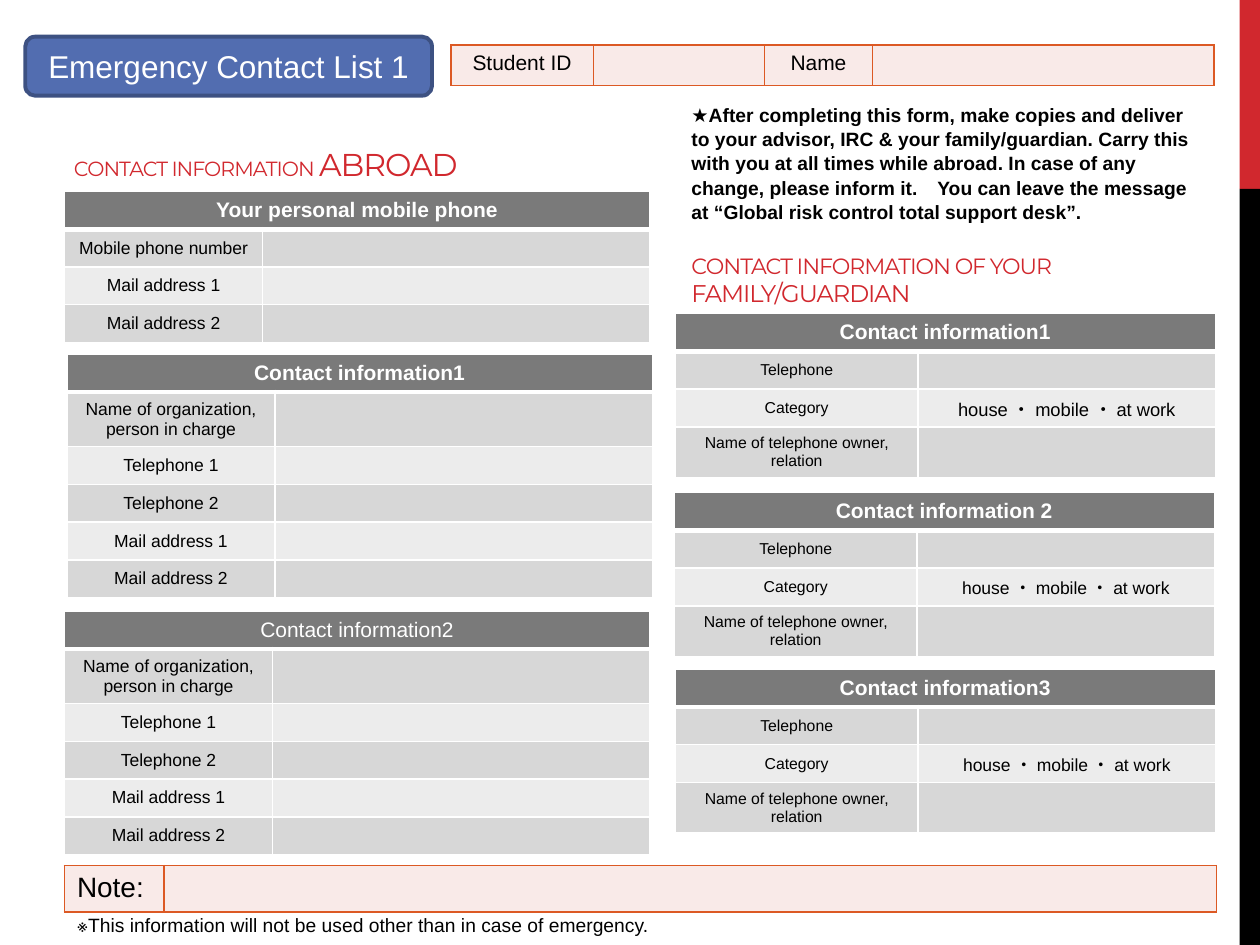
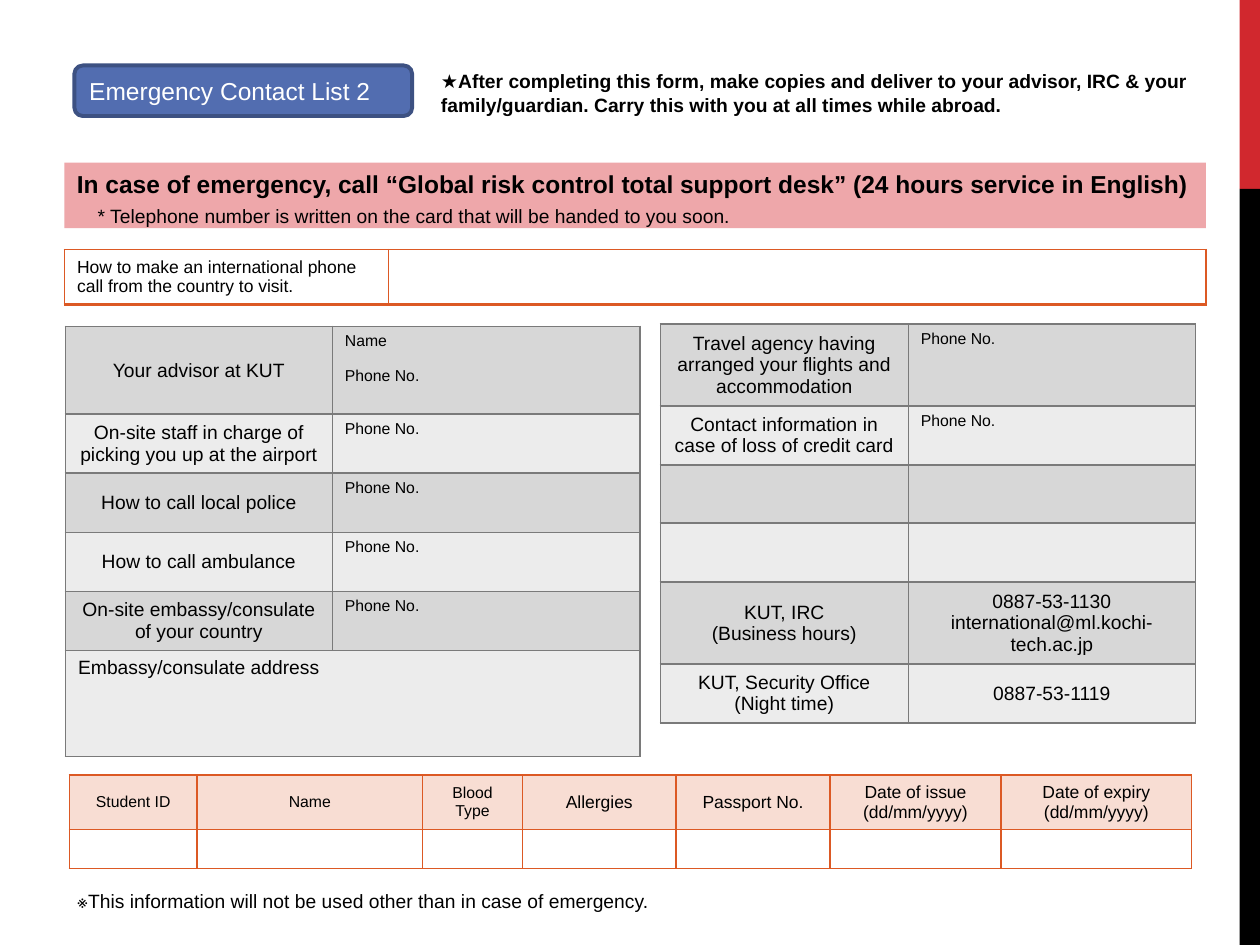
import dataclasses

import lxml.etree
import pptx
import pptx.dml.color
import pptx.enum.shapes
import pptx.enum.text
import pptx.oxml.ns
import pptx.util

Cm = pptx.util.Cm
Pt = pptx.util.Pt
qn = pptx.oxml.ns.qn
ALIGN = pptx.enum.text.PP_ALIGN
ANCHOR = pptx.enum.text.MSO_ANCHOR
SHAPE = pptx.enum.shapes.MSO_SHAPE


@dataclasses.dataclass(frozen=True)
class Theme:
    """Colours, fonts and type sizes shared by both slides."""
    red: str = "D1282E"
    black: str = "000000"
    white: str = "FFFFFF"
    header: str = "7A7A7A"
    bands: tuple = ("D7D7D7", "ECECEC")
    orange: str = "DC5924"
    blush: str = "F9EAE8"
    alert: str = "EEA7AA"
    badge: str = "526DB0"
    badge_line: str = "3D5182"
    body_font: str = "Arial"
    head_font: str = "Montserrat"
    tiny: float = 9
    small: float = 10
    body: float = 11
    label: float = 12
    alert_size: float = 14
    note: float = 16
    title: float = 18


T = Theme()
FOOTNOTE = "※This information will not be used other than in case of emergency."
ADVICE = ("★After completing this form, make copies and deliver to your advisor, "
          "IRC & your family/guardian. Carry this with you at all times while abroad.")
ADVICE_MORE = (" In case of any change, please inform it.　You can leave the message "
               "at “Global risk control total support desk”.")
ORGANIZATION_ROWS = ("Name of organization, person in charge", "Telephone 1",
                     "Telephone 2", "Mail address 1", "Mail address 2")
FAMILY_ROWS = ("Telephone", "Category", "Name of telephone owner, relation")
PLACES = "house ・ mobile ・ at work"
PHONE = "Phone No."


def rgb(color):
    """Turn a hex string into a colour."""
    return pptx.dml.color.RGBColor.from_string(color)


def style_run(r, size, color=T.black, bold=False, font=T.body_font):
    """Format one run."""
    r.font.name, r.font.size, r.font.bold = font, Pt(size), bold
    r.font.color.rgb = rgb(color)


def put_text(tf, text, size, color=T.black, bold=False, align=ALIGN.LEFT):
    """Write text, one paragraph a line, and format all of it."""
    tf.word_wrap = True
    tf.text = text
    for p in tf.paragraphs:
        p.alignment = align
        for r in p.runs:
            style_run(r, size, color, bold)
        if not p.runs:
            lxml.etree.SubElement(p._p, qn("a:endParaRPr"), sz=str(int(size * 100)))


def add_box(s, box):
    """Add an empty text box."""
    return s.shapes.add_textbox(*map(Cm, box)).text_frame


def add_panel(s, box, kind, fill, line=None):
    """Add a filled preset shape."""
    sp = s.shapes.add_shape(kind, *map(Cm, box))
    sp.shadow.inherit = False
    sp.fill.solid()
    sp.fill.fore_color.rgb = rgb(fill)
    if line:
        sp.line.color.rgb = rgb(line)
        sp.line.width = Pt(2.25)
    else:
        sp.line.fill.background()
    return sp


def set_borders(cell, color, **widths):
    """Draw the four cell borders, 1 pt unless a width is given."""
    tcPr = cell._tc.get_or_add_tcPr()
    for side in "LRTB":
        width = Pt(widths.get(side, 1))
        ln = lxml.etree.SubElement(tcPr, qn("a:ln" + side), w=str(width))
        fill = lxml.etree.SubElement(ln, qn("a:solidFill"))
        lxml.etree.SubElement(fill, qn("a:srgbClr"), val=color)


def fill_cell(cell, color, alpha=None):
    """Fill a cell, or leave it clear when there is no colour."""
    if not color:
        cell.fill.background()
        return
    cell.fill.solid()
    cell.fill.fore_color.rgb = rgb(color)
    if alpha:
        clr = cell._tc.tcPr.find(qn("a:solidFill"))[0]
        lxml.etree.SubElement(clr, qn("a:alpha"), val=str(alpha * 1000))


def put_cell(cell, text, size, align=ALIGN.CENTER, anchor=ANCHOR.MIDDLE, **look):
    """Write a cell's text and place it."""
    put_text(cell.text_frame, text, size, align=align, **look)
    cell.vertical_anchor = anchor


def add_grid(s, left, top, widths, heights):
    """Add a plain table with the given column widths and row heights."""
    frame = s.shapes.add_table(len(heights), len(widths), Cm(left), Cm(top),
                               Cm(sum(widths)), Cm(sum(heights)))
    table = frame.table
    table.first_row = table.horz_banding = False
    for column, width in zip(table.columns, widths):
        column.width = Cm(width)
    for row, height in zip(table.rows, heights):
        row.height = Cm(height)
    return table


def side_strip(s, box):
    """Draw the red and black strip, red on its top fifth."""
    left, top, width, height = box
    red = height / 5
    add_panel(s, (left, top, width, red), SHAPE.RECTANGLE, T.red)
    add_panel(s, (left, top + red, width, height - red), SHAPE.RECTANGLE, T.black)


def badge(s, box, text, size, align):
    """Draw the blue rounded slide title."""
    sp = add_panel(s, box, SHAPE.ROUNDED_RECTANGLE, T.badge, T.badge_line)
    put_text(sp.text_frame, text, size, T.white, align=align)
    sp.text_frame.vertical_anchor = ANCHOR.MIDDLE


def heading(s, box, parts):
    """Write a red section heading from (text, size) parts."""
    tf = add_box(s, box)
    tf.word_wrap = True
    tf.vertical_anchor = ANCHOR.BOTTOM
    for text, size in parts:
        r = tf.paragraphs[0].add_run()
        r.text = text
        style_run(r, size, T.red, font=T.head_font)
        r._r.get_or_add_rPr().set("spc", "-60")


def advice(s, box, text):
    """Write the bold starred instruction."""
    tf = add_box(s, box)
    put_text(tf, text, T.body, bold=True)
    tf.paragraphs[0].line_spacing = 1.05


def footnote(s, top):
    """Write the footnote across the slide."""
    put_text(add_box(s, (1.3, top, 23.19, 0.74)), FOOTNOTE, T.body)


def form_row(s, left, top, widths, height, texts, size, align):
    """Draw a one-row form with orange borders."""
    table = add_grid(s, left, top, widths, [height])
    for cell, text in zip(table.iter_cells(), texts):
        set_borders(cell, T.orange)
        fill_cell(cell, T.blush)
        put_cell(cell, text, size, align, ANCHOR.TOP)


def contact_card(s, box, title, labels, size, heights, values=None, bold=True):
    """Draw a titled card of labels and answers; box is left, top, width, label width."""
    left, top, width, label_width = box
    table = add_grid(s, left, top, [label_width, width - label_width], [0.76, *heights])
    table.cell(0, 0).merge(table.cell(0, 1))
    for cell in table.rows[0].cells:
        set_borders(cell, T.white, B=3)
        fill_cell(cell, T.header)
    put_cell(table.cell(0, 0), title, T.label, color=T.white, bold=bold)
    for i, label in enumerate(labels):
        answer, answer_size = (values or {}).get(label, ("", size))
        texts = ((label, size), (answer, answer_size))
        for cell, (text, text_size) in zip(table.rows[i + 1].cells, texts):
            set_borders(cell, T.white, T=1 if i else 3)
            fill_cell(cell, T.bands[i % 2])
            put_cell(cell, text, text_size)


def phone_list(s, left, top, widths, rows):
    """Draw a banded list; each row is height, label, answer."""
    table = add_grid(s, left, top, widths, [row[0] for row in rows])
    for i, (_, label, answer) in enumerate(rows):
        for cell in table.rows[i].cells:
            set_borders(cell, T.header)
            fill_cell(cell, T.bands[i % 2])
        name, value = table.rows[i].cells
        put_cell(name, label, T.body)
        if PHONE in answer:
            put_cell(value, answer, T.tiny, ALIGN.LEFT, ANCHOR.TOP)
            for p in value.text_frame.paragraphs[1:]:
                p.space_before = Pt(9.5)
        else:
            put_cell(value, answer, T.body)
    return table


def alert_banner(s, box):
    """Draw the emergency call banner."""
    tf = add_panel(s, box, SHAPE.RECTANGLE, T.alert).text_frame
    put_text(tf, "In case of emergency, call “Global risk control total support desk” "
                 "(24 hours service in English)\n"
                 "* Telephone number is written on the card that will be handed to you soon.",
             T.alert_size, bold=True)
    tf.vertical_anchor = ANCHOR.TOP
    p = tf.paragraphs[1]
    p._p.get_or_add_pPr().set("marL", str(Cm(0.42)))
    p.space_before = Pt(3.5)
    style_run(p.runs[0], T.body)


def calling_row(s, left, top):
    """Draw the row for international calling instructions."""
    table = add_grid(s, left, top, [6.53, 16.48], [1.09])
    texts = ("How to make an international phone call from the country to visit.", "")
    for cell, text in zip(table.iter_cells(), texts):
        set_borders(cell, T.orange, B=2)
        fill_cell(cell, None)
        put_cell(cell, text, T.small, ALIGN.LEFT)


def identity_table(s, left, top):
    """Draw the student identity table."""
    fields = (("Student ID", 2.57, T.tiny), ("Name", 4.55, T.tiny),
              ("Blood Type", 2.01, T.tiny), ("Allergies", 3.1, T.small),
              ("Passport No.", 3.1, T.small),
              ("Date of issue\n(dd/mm/yyyy)", 3.45, T.small),
              ("Date of expiry\n(dd/mm/yyyy)", 3.84, T.small))
    table = add_grid(s, left, top, [field[1] for field in fields], [1.05, 0.79])
    for i, (text, _, size) in enumerate(fields):
        for cell, words, color in ((table.cell(0, i), text, T.orange),
                                   (table.cell(1, i), "", None)):
            set_borders(cell, T.orange)
            fill_cell(cell, color, 20)
            put_cell(cell, words, size)


def add_slide(prs):
    """Add a blank slide with the side strip."""
    s = prs.slides.add_slide(prs.slide_layouts[6])
    side_strip(s, (24.99, 0, 0.41, 19.05))
    return s


def contact_slide(prs):
    """Build the list of contacts abroad and at home."""
    s = add_slide(prs)
    heading(s, (1.24, 2.92, 12.47, 0.89),
            [("CONTACT INFORMATION ", 11.7), ("ABROAD", T.title)])
    heading(s, (13.69, 4.93, 10.8, 1.4),
            [("CONTACT INFORMATION OF YOUR ", 12.6), ("FAMILY/GUARDIAN", 13.8)])
    form_row(s, 9.09, 0.91, [2.87, 3.45, 2.18, 6.88], 0.81,
             ("Student ID", "", "Name", ""), T.label, ALIGN.CENTER)
    contact_card(s, (1.3, 3.86, 11.8, 3.99), "Your personal mobile phone",
                 ("Mobile phone number", "Mail address 1", "Mail address 2"),
                 T.small, [0.76] * 3)
    contact_card(s, (1.35, 7.14, 11.8, 4.19), "Contact information1",
                 ORGANIZATION_ROWS, T.small, [1.02] + [0.76] * 4)
    contact_card(s, (1.3, 12.32, 11.8, 4.19), "Contact information2",
                 ORGANIZATION_ROWS, T.small, [1.09] + [0.76] * 4, bold=False)
    for left, top, number, size in ((13.61, 6.32, "1", 10.5), (13.59, 9.93, " 2", T.small),
                                    (13.61, 13.49, "3", T.small)):
        contact_card(s, (left, top, 10.89, 4.9), "Contact information" + number,
                     FAMILY_ROWS, T.tiny, [0.76, 0.76, 0.95], {"Category": (PLACES, size)})
    form_row(s, 1.3, 17.45, [2.01, 21.21], 0.89, ("Note:", ""), T.note, ALIGN.LEFT)
    footnote(s, 18.29)
    advice(s, (13.69, 1.93, 10.8, 2.62), ADVICE + ADVICE_MORE)
    badge(s, (0.51, 0.74, 8.2, 1.19), "Emergency Contact List 1", T.title, ALIGN.CENTER)


def emergency_slide(prs):
    """Build the list of emergency numbers."""
    s = add_slide(prs)
    identity_table(s, 1.4, 15.62)
    advice(s, (8.64, 1.24, 15.8, 1.19), ADVICE)
    badge(s, (1.5, 1.32, 6.81, 1.02), "Emergency Contact List 2", T.alert_size, ALIGN.LEFT)
    local = phone_list(s, 1.32, 6.58, [5.38, 6.2], (
        (1.77, "Your advisor at KUT", "Name\n" + PHONE),
        (1.19, "On-site staff in charge of picking you up at the airport", PHONE),
        (1.19, "How to call local police", PHONE),
        (1.19, "How to call ambulance", PHONE),
        (1.19, "On-site embassy/consulate of your country", PHONE),
        (2.14, "", "")))
    local.cell(5, 0).merge(local.cell(5, 1))
    put_cell(local.cell(5, 0), "Embassy/consulate address", T.body, ALIGN.LEFT, ANCHOR.TOP)
    phone_list(s, 13.31, 6.53, [5, 5.79], (
        (1.65, "Travel agency having arranged your flights and accommodation", PHONE),
        (1.19, "Contact information in case of loss of credit card", PHONE),
        (1.17, "", ""),
        (1.19, "", ""),
        (1.65, "KUT, IRC\n(Business hours)", "0887-53-1130\ninternational@ml.kochi-tech.ac.jp"),
        (1.19, "KUT, Security Office\n(Night time)", "0887-53-1119")))
    alert_banner(s, (1.3, 3.28, 23.01, 1.32))
    footnote(s, 17.81)
    calling_row(s, 1.3, 5.03)


def main():
    """Build and save the presentation."""
    prs = pptx.Presentation()
    prs.slide_width, prs.slide_height = Cm(25.4), Cm(19.05)
    contact_slide(prs)
    emergency_slide(prs)
    prs.save("out.pptx")


if __name__ == "__main__":
    main()
